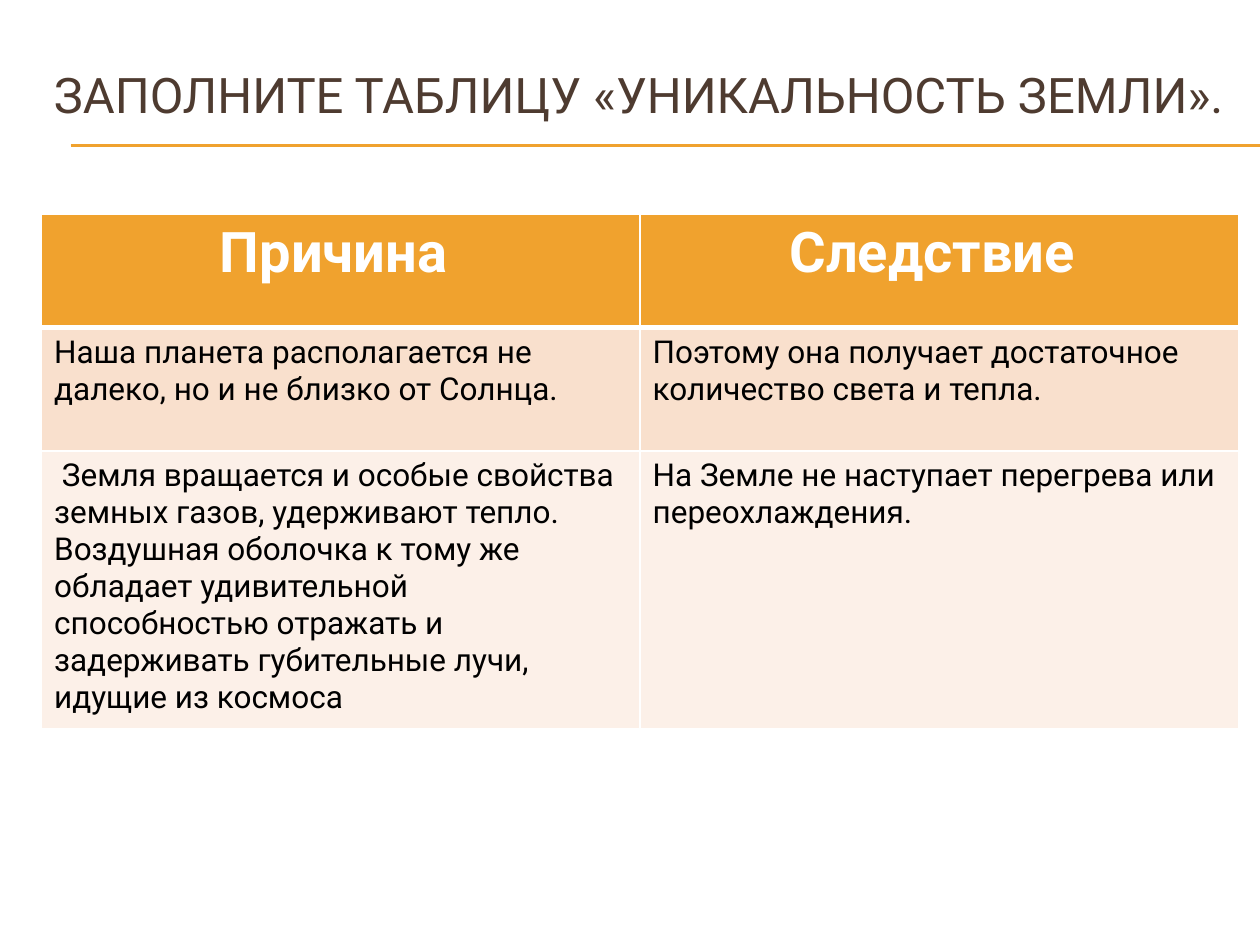
from dataclasses import dataclass

from lxml.etree import SubElement
from pptx import Presentation
from pptx.dml.color import RGBColor
from pptx.enum.shapes import MSO_CONNECTOR
from pptx.enum.text import MSO_ANCHOR, PP_ALIGN
from pptx.oxml.ns import qn
from pptx.util import Inches, Pt

TITLE = "ЗАПОЛНИТЕ ТАБЛИЦУ «УНИКАЛЬНОСТЬ ЗЕМЛИ»."
ROWS = [
    ("Причина ", "Следствие "),
    ("Наша планета располагается не далеко, но и не близко от Солнца.",
     "Поэтому она получает достаточное количество света и тепла."),
    (" Земля вращается и особые свойства земных газов, удерживают тепло. "
     "Воздушная оболочка к тому же обладает удивительной способностью отражать "
     "и задерживать губительные лучи, идущие из космоса",
     "На Земле не наступает перегрева или переохлаждения."),
]
ROW_HEIGHTS = (0.9, 0.98, 2.15)
LEFT, WIDTH, TABLE_TOP = 0.33, 9.5, 1.7
RULE_LEFT, RULE_HEIGHTS = 0.56, (1.15, 1.16)


@dataclass(frozen=True)
class Theme:
    font: str = "Roboto"
    title: str = "4E3B30"
    accent: str = "F0A22E"
    light: str = "FFFFFF"
    body: str = "000000"
    row_fills: tuple = ("F0A22E", "F9E0CD", "FCF0E8")
    title_size: int = 28
    header_size: int = 32
    body_size: int = 18


THEME = Theme()


def style_text(paragraph, size, color, bold=False):
    for span in paragraph.runs:
        span.font.name = THEME.font
        span.font.size = Pt(size)
        span.font.bold = bold
        span.font.color.rgb = RGBColor.from_string(color)


def add_title(page):
    box = page.shapes.add_textbox(Inches(LEFT), Inches(0.5), Inches(WIDTH), Inches(0.92))
    frame = box.text_frame
    frame.word_wrap = True
    frame.vertical_anchor = MSO_ANCHOR.TOP
    frame.margin_top = Inches(0.01)
    frame.text = TITLE
    style_text(frame.paragraphs[0], THEME.title_size, THEME.title)


def add_rule(page, top, right):
    rule = page.shapes.add_connector(
        MSO_CONNECTOR.STRAIGHT, Inches(RULE_LEFT), Inches(top), right, Inches(top))
    rule.line.color.rgb = RGBColor.from_string(THEME.accent)
    rule.line.width = Pt(0.75)
    SubElement(rule._element.spPr, qn("a:effectLst"))


def set_borders(cell, widths):
    """Draw the cell's borders; widths maps a side (L, R, T, B) to points."""
    properties = cell._tc.get_or_add_tcPr()
    for position, (side, width) in enumerate(widths.items()):
        border = SubElement(properties, qn(f"a:ln{side}"), w=str(Pt(width)))
        fill = SubElement(border, qn("a:solidFill"))
        SubElement(fill, qn("a:srgbClr"), val=THEME.light)
        properties.insert(position, border)


def add_table(page):
    columns = len(ROWS[0])
    table = page.shapes.add_table(
        len(ROWS), columns, Inches(LEFT), Inches(TABLE_TOP),
        Inches(WIDTH), Inches(sum(ROW_HEIGHTS))).table
    for column in table.columns:
        column.width = Inches(WIDTH / columns)
    for row_index, texts in enumerate(ROWS):
        header = row_index == 0
        table.rows[row_index].height = Inches(ROW_HEIGHTS[row_index])
        for column_index, text in enumerate(texts):
            cell = table.cell(row_index, column_index)
            cell.text_frame.text = text
            paragraph = cell.text_frame.paragraphs[0]
            paragraph.alignment = PP_ALIGN.CENTER if header else PP_ALIGN.LEFT
            style_text(paragraph,
                       THEME.header_size if header else THEME.body_size,
                       THEME.light if header else THEME.body, bold=header)
            cell.fill.solid()
            cell.fill.fore_color.rgb = RGBColor.from_string(THEME.row_fills[row_index])
            set_borders(cell, {"L": 1, "R": 1, "T": 3 if row_index == 1 else 1,
                               "B": 3 if header else 1})


def main():
    deck = Presentation()
    deck.slide_width, deck.slide_height = Inches(10), Inches(7.5)
    page = deck.slides.add_slide(deck.slide_layouts[6])
    for top in RULE_HEIGHTS:
        add_rule(page, top, deck.slide_width)
    add_title(page)
    add_table(page)
    deck.save("out.pptx")


if __name__ == "__main__":
    main()
